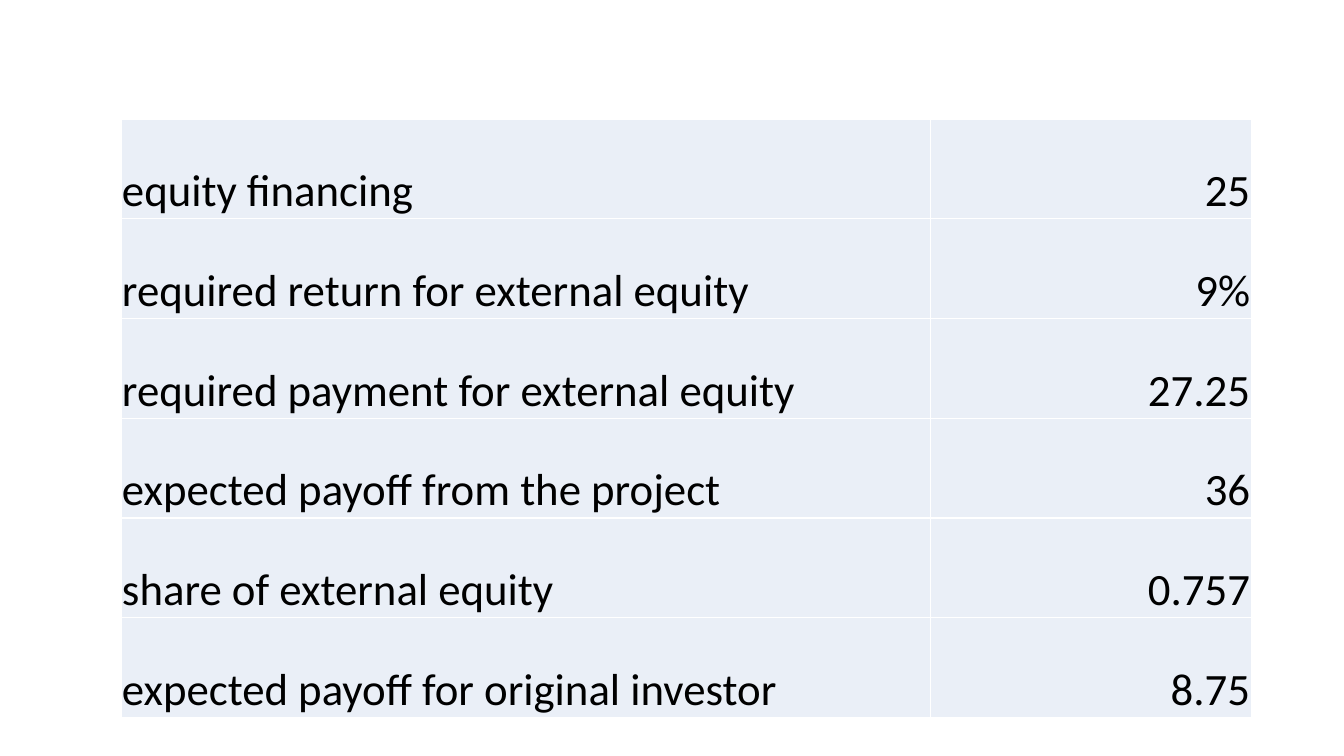
import dataclasses

import lxml.etree
import pptx
import pptx.dml.color
import pptx.enum.text
import pptx.oxml.ns
import pptx.util


@dataclasses.dataclass(frozen=True)
class Theme:
    """Colours, font and sizes of the slide."""

    font: str = "Calibri"
    text_size: int = 32
    text_color: str = "000000"
    cell_color: str = "EAEFF7"
    border_color: str = "FFFFFF"
    border_width: int = 1
    inset: float = 0.01


class SlideBuilder:
    """Adds styled elements to the current slide."""

    def __init__(self, theme, slide):
        """Keep the theme and the slide."""
        self.theme = theme
        self.slide = slide

    def add_figures(self, figures, left, top, column_widths, row_height):
        """Add a table of labels and right-aligned values."""
        inches = pptx.util.Inches
        table = self.slide.shapes.add_table(
            len(figures), len(column_widths), inches(left), inches(top),
            inches(sum(column_widths)), inches(row_height * len(figures)),
        ).table
        table.first_row = False
        table.horz_banding = False
        for column, width in zip(table.columns, column_widths):
            column.width = inches(width)
        alignments = (pptx.enum.text.PP_ALIGN.LEFT, pptx.enum.text.PP_ALIGN.RIGHT)
        for row, figure in zip(table.rows, figures):
            row.height = inches(row_height)
            for cell, wording, alignment in zip(row.cells, figure, alignments):
                self.fill_cell(cell, wording, alignment)

    def fill_cell(self, cell, wording, alignment):
        """Write and format one table cell."""
        theme = self.theme
        inset = pptx.util.Inches(theme.inset)
        cell.margin_left = cell.margin_right = cell.margin_top = inset
        cell.margin_bottom = 0
        cell.vertical_anchor = pptx.enum.text.MSO_ANCHOR.BOTTOM
        self.add_borders(cell)
        cell.fill.solid()
        cell.fill.fore_color.rgb = pptx.dml.color.RGBColor.from_string(theme.cell_color)
        paragraph = cell.text_frame.paragraphs[0]
        paragraph.alignment = alignment
        run = paragraph.add_run()
        run.text = wording
        run.font.name = theme.font
        run.font.size = pptx.util.Pt(theme.text_size)
        run.font.color.rgb = pptx.dml.color.RGBColor.from_string(theme.text_color)

    def add_borders(self, cell):
        """Draw a line on each side of a cell."""
        qn = pptx.oxml.ns.qn
        properties = cell._tc.get_or_add_tcPr()
        width = str(pptx.util.Pt(self.theme.border_width))
        for side in ("a:lnL", "a:lnR", "a:lnT", "a:lnB"):
            border = lxml.etree.SubElement(properties, qn(side), w=width)
            fill = lxml.etree.SubElement(border, qn("a:solidFill"))
            lxml.etree.SubElement(fill, qn("a:srgbClr"), val=self.theme.border_color)


def main():
    """Build and save the slide."""
    presentation = pptx.Presentation()
    presentation.slide_width = pptx.util.Inches(13.33)
    presentation.slide_height = pptx.util.Inches(7.5)
    slide = presentation.slides.add_slide(presentation.slide_layouts[6])
    equity_figures = [
        ("equity financing", "25"),
        ("required return for external equity", "9%"),
        ("required payment for external equity", "27.25"),
        ("expected payoff from the project", "36"),
        ("share of external equity", "0.757"),
        ("expected payoff for original investor", "8.75"),
    ]
    builder = SlideBuilder(Theme(), slide)
    builder.add_figures(
        equity_figures, left=1.2, top=1.18, column_widths=(8.03, 3.18), row_height=0.99
    )
    presentation.save("out.pptx")


if __name__ == "__main__":
    main()
